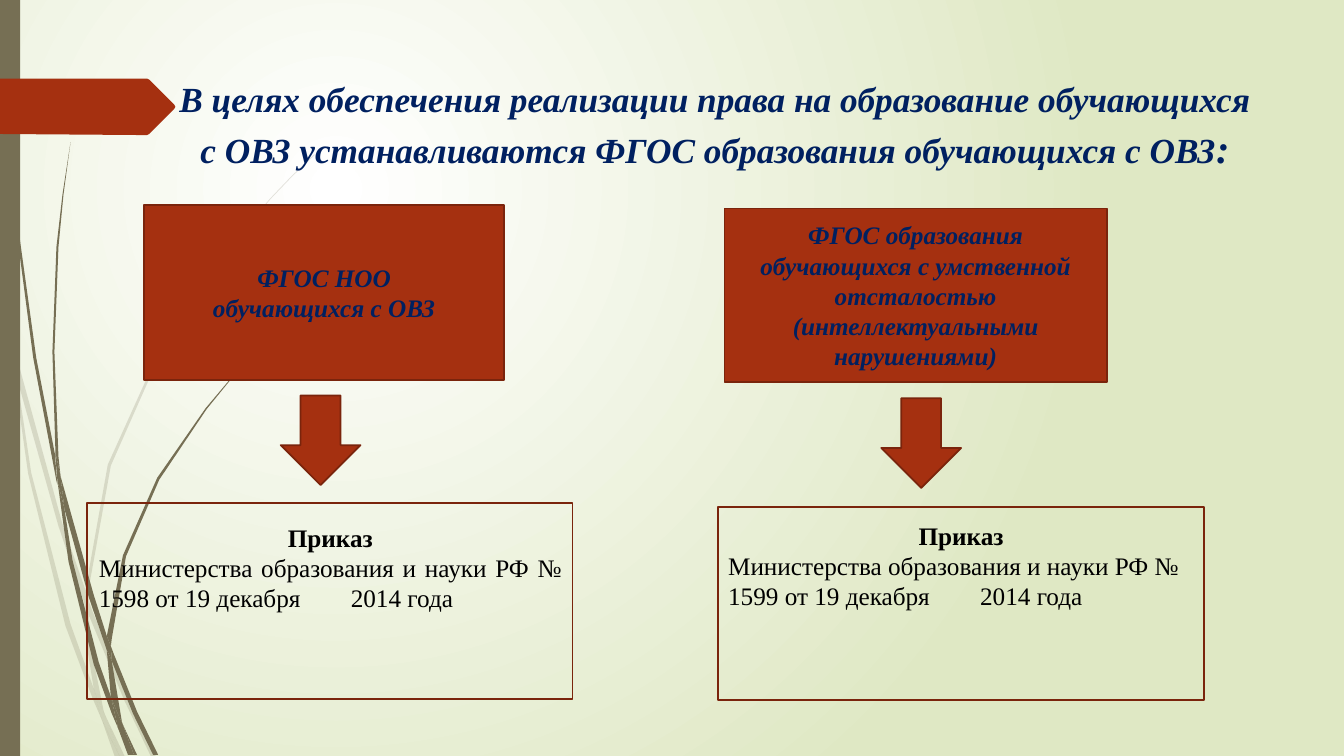
from lxml import etree
from pptx import Presentation
from pptx import util as u
from pptx.dml.color import RGBColor
from pptx.enum import shapes, text
from pptx.oxml import ns

WHITE = RGBColor(0xFF, 0xFF, 0xFF)
PALE_GREEN = RGBColor(0xDF, 0xE8, 0xC4)
OLIVE = RGBColor(0x76, 0x6F, 0x54)
RUST = RGBColor(0xA5, 0x30, 0x10)
DARK_RUST = RGBColor(0x7A, 0x24, 0x0C)
NAVY = RGBColor(0x00, 0x20, 0x60)
BLACK = RGBColor(0x00, 0x00, 0x00)

CENTER = text.PP_ALIGN.CENTER
LEFT = text.PP_ALIGN.LEFT
JUSTIFY = text.PP_ALIGN.JUSTIFY
RECTANGLE = shapes.MSO_SHAPE.RECTANGLE
DOWN_ARROW = shapes.MSO_SHAPE.DOWN_ARROW

OUTLINE_UNIT = 0.72
FAINT_STEMS = [
    [(11, 350), (9, 322), (0, 282), (0, 299), (10, 344)],
    [(58, 522), (84, 599), (85, 586), (62, 520), (14, 345), (17, 376)],
    [(92, 607), (88, 596), (88, 610), (123, 694), (150, 751), (155, 751), (127, 692)],
    [(119, 751), (124, 751), (105, 711)],
    [(93, 683), (70, 619), (31, 469), (17, 376), (11, 350), (28, 470),
     (65, 621), (92, 693), (101, 714), (99, 707)],
    [(84, 599), (87, 646), (93, 683), (96, 692), (105, 711), (103, 706),
     (91, 646), (88, 610), (88, 608)],
    [(88, 584), (110, 462), (160, 349), (229, 245), (268, 198), (290, 175),
     (312, 154), (312, 153), (289, 175), (268, 197), (228, 244), (158, 348),
     (107, 461), (85, 584), (85, 586), (88, 596)],
    [(101, 714), (114, 751), (119, 751)],
    [(88, 608), (88, 610), (88, 596), (85, 586), (84, 599)],
    [(96, 692), (93, 683), (99, 707), (101, 714), (119, 751), (105, 711)],
]
DARK_STEMS = [
    [(7, 110), (17, 233), (33, 355), (56, 477), (57, 481), (55, 457), (55, 453),
     (36, 355), (19, 232), (8, 109), (5, 48), (4, 0), (3, 0), (4, 48)],
    [(88, 592), (106, 645), (106, 633), (106, 631), (93, 590), (60, 472), (64, 505)],
    [(113, 649), (110, 641), (111, 656), (132, 708), (152, 749), (157, 749), (136, 706)],
    [(110, 691), (98, 657), (72, 556), (64, 505), (57, 477), (68, 557),
     (93, 659), (111, 708), (117, 722), (116, 717)],
    [(60, 472), (58, 453), (54, 349), (58, 245), (63, 193), (70, 141),
     (62, 193), (56, 245), (52, 349), (55, 449)],
    [(133, 749), (136, 749), (122, 719)],
    [(57, 477), (64, 505), (60, 472), (55, 449), (55, 453)],
    [(111, 633), (125, 552), (158, 476), (205, 406), (231, 374), (245, 359),
     (261, 344), (260, 344), (245, 358), (231, 373), (204, 405), (156, 474),
     (122, 551), (106, 631), (110, 641)],
    [(117, 722), (127, 749), (131, 749)],
    [(106, 645), (110, 691), (116, 706), (122, 719), (121, 716), (111, 656), (109, 651)],
    [(106, 645), (109, 651), (111, 656), (110, 641), (106, 631), (106, 633)],
    [(116, 706), (110, 691), (116, 717), (117, 722), (130, 749), (133, 749), (122, 719)],
]
TITLE_TAG = [(173, 108), (148, 133), (146, 134), (136, 134), (0, 133), (0, 78),
             (146, 78), (148, 79), (173, 104), (174, 106)]


class SlideBuilder:
    """Holds the style and the current slide and adds each kind of element."""

    font = "Times New Roman"
    body_size = 18
    line_width = 1.25

    def __init__(self, slide):
        self.slide = slide

    def background(self):
        fill = self.slide.background.fill
        fill.gradient()
        for stop, color, position in zip(fill.gradient_stops, (WHITE, PALE_GREEN), (0, 1)):
            stop.color.rgb = color
            stop.position = position
        gradient = self.slide.element.find(".//" + ns.qn("a:gradFill"))
        linear = gradient.find(ns.qn("a:lin"))
        circle = etree.Element(ns.qn("a:path"), path="circle")
        etree.SubElement(circle, ns.qn("a:fillToRect"),
                         l="50000", t="50000", r="100000", b="100000")
        gradient.replace(linear, circle)

    def outline(self, points, color, opacity=None):
        builder = self.slide.shapes.build_freeform(*points[0], scale=u.Pt(OUTLINE_UNIT))
        builder.add_line_segments(points[1:], close=True)
        shape = builder.convert_to_shape()
        self.paint(shape, color)
        if opacity:
            solid = shape.element.find(".//" + ns.qn("a:srgbClr"))
            etree.SubElement(solid, ns.qn("a:alpha"), val=str(opacity * 1000))

    def paint(self, shape, fill=None, line=None):
        shape.shadow.inherit = False
        if fill is None:
            shape.fill.background()
        else:
            shape.fill.solid()
            shape.fill.fore_color.rgb = fill
        if line is None:
            shape.line.fill.background()
        else:
            shape.line.color.rgb = line
            shape.line.width = u.Pt(self.line_width)

    def shape(self, kind, place, fill=None, line=DARK_RUST):
        shape = self.slide.shapes.add_shape(kind, *map(u.Pt, place))
        self.paint(shape, fill, line)
        return shape

    def style(self, span, color, size=body_size, bold=True, italic=False):
        span.font.name = self.font
        span.font.size = u.Pt(size)
        span.font.bold = bold
        span.font.italic = italic
        span.font.color.rgb = color

    def title(self, words, ending, place):
        title = self.slide.shapes.title
        title.element.getparent().append(title.element)
        title.left, title.top, title.width, title.height = map(u.Pt, place)
        frame = title.text_frame
        frame.auto_size = text.MSO_AUTO_SIZE.NONE
        frame.vertical_anchor = text.MSO_ANCHOR.TOP
        frame.word_wrap = True
        frame.text = words
        para = frame.paragraphs[0]
        para.alignment = CENTER
        para.line_spacing = 1.08
        para.add_run().text = ending
        for span, size in zip(para.runs, (25.2, 28.8)):
            self.style(span, NAVY, size, italic=True)

    def standard(self, words, place):
        frame = self.shape(RECTANGLE, place, RUST).text_frame
        frame.word_wrap = True
        frame.vertical_anchor = text.MSO_ANCHOR.MIDDLE
        frame.text = words
        for para in frame.paragraphs:
            para.alignment = CENTER
            self.style(para.runs[0], NAVY, italic=True)

    def order(self, details, alignment, place):
        frame = self.slide.shapes.add_textbox(*map(u.Pt, place)).text_frame
        frame.word_wrap = True
        frame.text = "Приказ\n" + details
        heading, body = frame.paragraphs
        heading.alignment = CENTER
        body.alignment = alignment
        self.style(heading.runs[0], BLACK)
        self.style(body.runs[0], BLACK, bold=False)
        stops = etree.SubElement(body._p.get_or_add_pPr(), ns.qn("a:tabLst"))
        etree.SubElement(stops, ns.qn("a:tab"), pos=str(u.Pt(180)), algn="l")


def main():
    deck = Presentation()
    deck.slide_width, deck.slide_height = u.Pt(960), u.Pt(540)
    page = SlideBuilder(deck.slides.add_slide(deck.slide_layouts[5]))
    page.background()
    for stem in FAINT_STEMS:
        page.outline(stem, OLIVE, opacity=20)
    for stem in DARK_STEMS:
        page.outline(stem, OLIVE)
    page.shape(RECTANGLE, (0, 0, 14.4, 540), OLIVE, line=None)
    page.outline(TITLE_TAG, RUST)
    page.title("В целях обеспечения реализации права на образование обучающихся "
               "с ОВЗ устанавливаются ФГОС образования обучающихся с ОВЗ", ":",
               (120, 49, 781.5, 86))
    page.standard("ФГОС НОО\nобучающихся с ОВЗ", (103, 146.5, 257, 125))
    page.standard("ФГОС образования обучающихся с умственной отсталостью "
                  "(интеллектуальными нарушениями)", (517.5, 149, 273, 124))
    for left, top in ((200.5, 282.5), (629.5, 284.5)):
        page.shape(DOWN_ARROW, (left, top, 57, 64), RUST)
    for place in ((62, 359.5, 347, 140), (513, 362, 347, 138)):
        page.shape(RECTANGLE, place)
    page.order("Министерства образования и науки РФ № 1598 от 19 декабря\t2014 года",
               JUSTIFY, (63.5, 369.5, 345, 150.5))
    page.order("Министерства образования и науки РФ № 1599 от 19 декабря\t2014 года",
               LEFT, (513, 368, 347, 133))
    deck.save("out.pptx")


if __name__ == "__main__":
    main()
